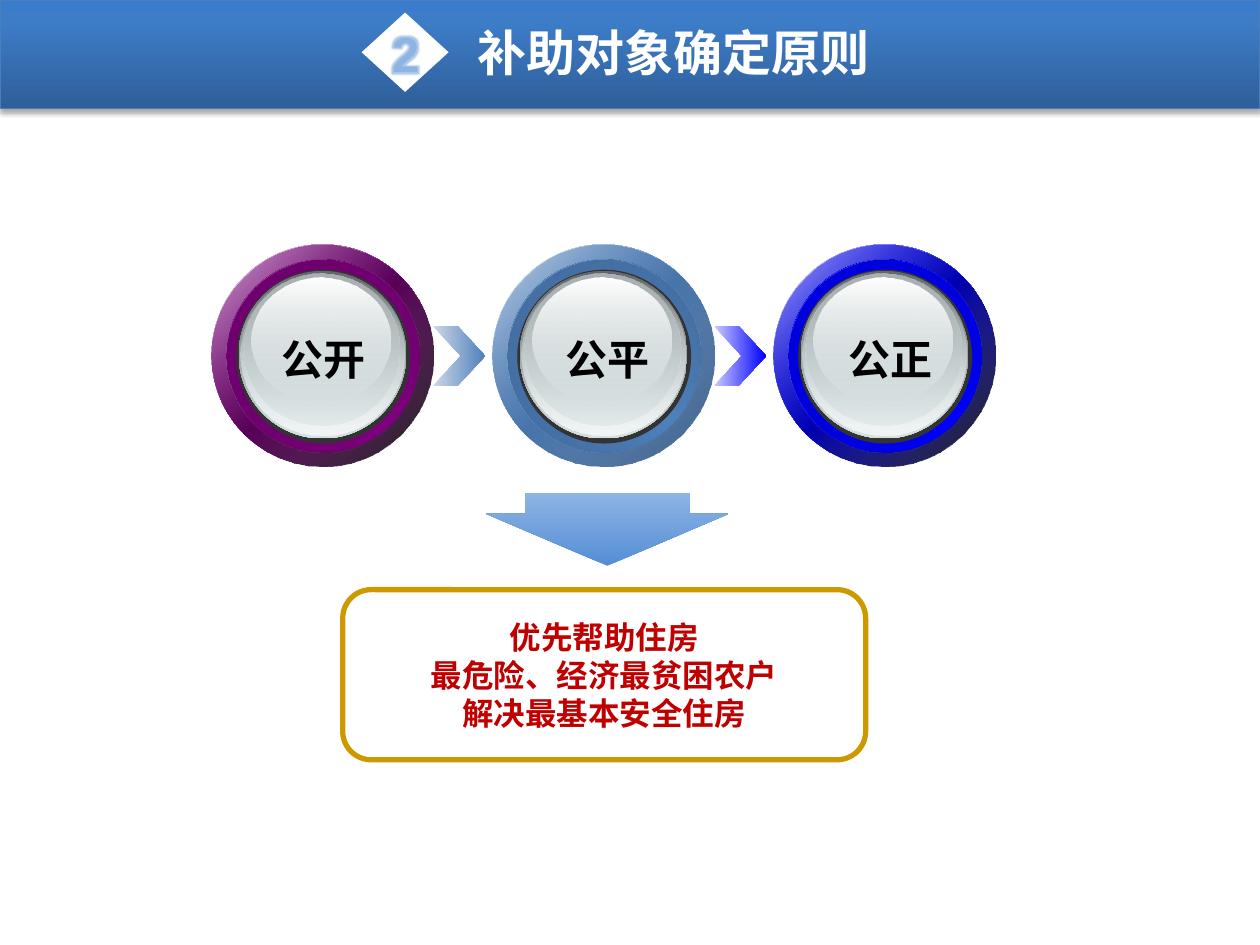
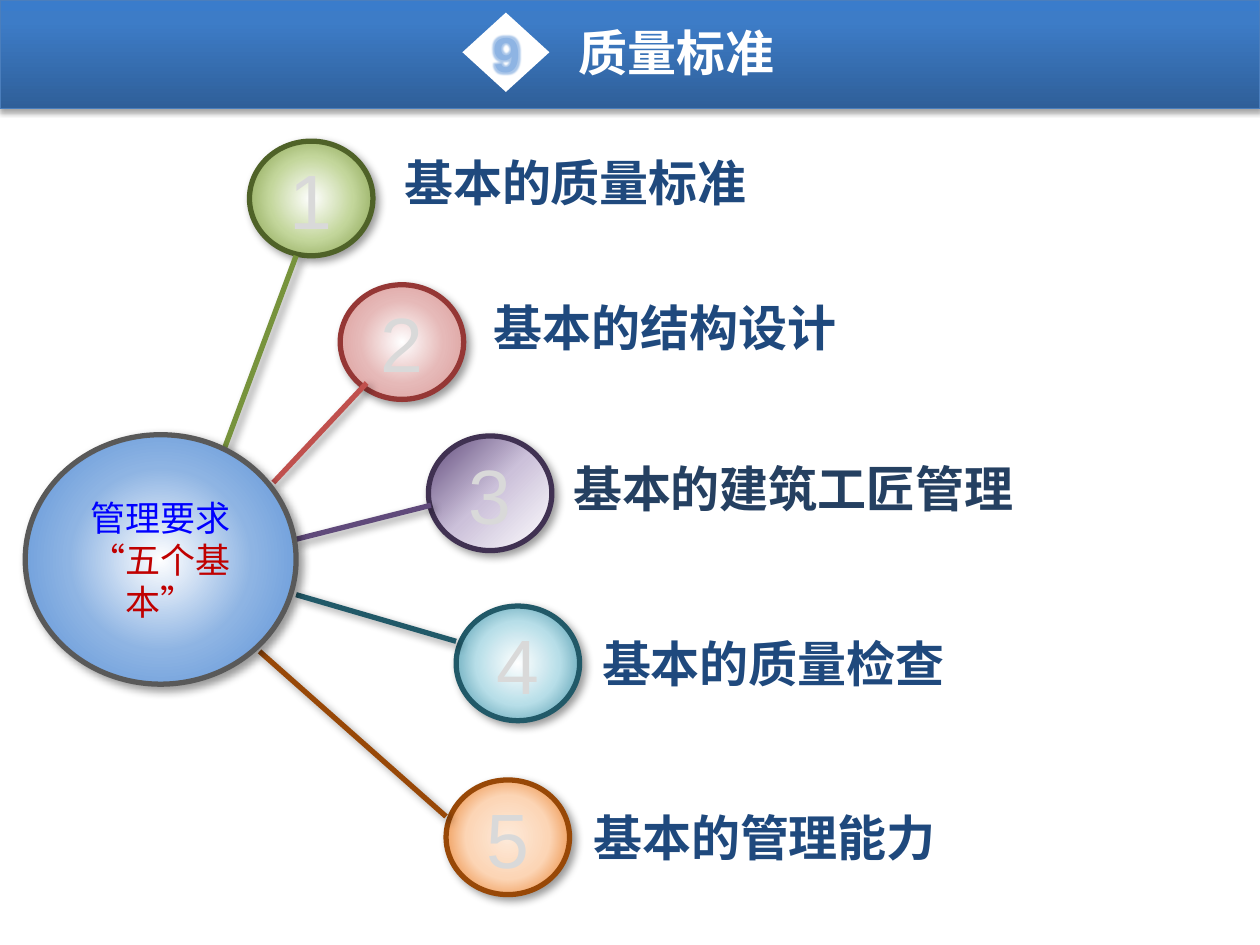
from pptx import Presentation
from pptx.dml.color import RGBColor
from pptx.enum.shapes import MSO_CONNECTOR, MSO_SHAPE
from pptx.enum.text import MSO_ANCHOR, MSO_AUTO_SIZE, PP_ALIGN
from pptx.oxml import parse_xml
from pptx.oxml.ns import nsdecls, qn
from pptx.util import Inches, Pt
from lxml import etree

RECT, OVAL, DIAMOND = MSO_SHAPE.RECTANGLE, MSO_SHAPE.OVAL, MSO_SHAPE.DIAMOND
CHEVRON, UP_ARROW, ROUNDED = MSO_SHAPE.CHEVRON, MSO_SHAPE.UP_ARROW, MSO_SHAPE.ROUNDED_RECTANGLE
STRAIGHT = MSO_CONNECTOR.STRAIGHT
LEFT, CENTER = PP_ALIGN.LEFT, PP_ALIGN.CENTER
TOP, MIDDLE = MSO_ANCHOR.TOP, MSO_ANCHOR.MIDDLE
FIT_SHAPE = MSO_AUTO_SIZE.SHAPE_TO_FIT_TEXT

C = RGBColor.from_string
WHITE, BLACK, CHARCOAL = C("FFFFFF"), C("000000"), C("333333")
SKY, AZURE, NAVY, DEEP_NAVY = C("8EB4E3"), C("558ED5"), C("1F497D"), C("254061")
BAND_DARK, BAND_MID, BAND_TOP, BAND_EDGE = C("2F5F99"), C("3D7CC7"), C("3A7CCB"), C("4B7EBC")
PURPLE, STEEL, BLUE = C("800080"), C("4F81BD"), C("0000FF")
GLASS, GLASS_DARK, GLASS_MID, GLASS_LIGHT = C("D6E1E2"), C("636869"), C("AAB2B3"), C("F1F5F5")
RED, GOLD, GREY, SILVER = C("C00000"), C("CC9900"), C("595959"), C("D9D9D9")

SANS, CJK = "Arial", "Noto Sans CJK SC"
SHADOW = (
    "<a:outerShdw %s" % nsdecls("a")
    + ' blurRad="{}" dist="{}" dir="{}" algn="t" rotWithShape="0">'
    '<a:srgbClr val="000000"><a:alpha val="{}"/></a:srgbClr></a:outerShdw>'
)
BAND_SHADOW = SHADOW.format(Pt(3.1), Pt(1.8), 90 * 60000, 35000)
NODE_SHADOW = SHADOW.format(Pt(5), Pt(3), 45 * 60000, 40000)
GLOW = (
    '<a:effectLst %s><a:glow rad="63500"><a:srgbClr val="%s">'
    '<a:alpha val="75000"/></a:srgbClr></a:glow></a:effectLst>' % (nsdecls("a"), SKY)
)
CENTRED = (50, 50, 50, 50)

prs = Presentation()
prs.slide_width, prs.slide_height = Inches(10), Inches(7.5)
COL, ROW = prs.slide_width // 100, prs.slide_height // 75


def draw(shapes, kind, box, fill=None, line=None, width=3, shadow=None):
    x, y, w, h = box
    sp = shapes.add_shape(kind, int(x * COL), int(y * ROW), int(w * COL), int(h * ROW))
    spPr = sp.element.spPr
    if fill is None:
        sp.fill.background()
    elif isinstance(fill, RGBColor):
        sp.fill.solid()
        sp.fill.fore_color.rgb = fill
    else:
        stops, way = fill
        gs = "".join(
            '<a:gs pos="%d"><a:srgbClr val="%s"><a:alpha val="%d"/></a:srgbClr></a:gs>'
            % (s[0] * 1000, s[1], (s[2] if len(s) > 2 else 100) * 1000)
            for s in stops
        )
        if isinstance(way, tuple):
            rect = 'l="%d000" t="%d000" r="%d000" b="%d000"' % way
            shade = '<a:path path="circle"><a:fillToRect %s/></a:path>' % rect
        else:
            shade = '<a:lin ang="%d" scaled="0"/>' % (way * 60000)
        sp.fill.gradient()
        spPr.replace(spPr.find(qn("a:gradFill")), parse_xml(
            '<a:gradFill %s rotWithShape="1"><a:gsLst>%s</a:gsLst>%s</a:gradFill>'
            % (nsdecls("a"), gs, shade)))
    if line is None:
        sp.line.fill.background()
    else:
        sp.line.color.rgb = line
        sp.line.width = Pt(width)
    sp.shadow.inherit = False
    if shadow:
        spPr.find(qn("a:effectLst")).append(parse_xml(shadow))
    return sp


def write(sp, text, size, color, bold=True, font=SANS, align=CENTER, wrap=False, anchor=TOP):
    tf = sp.text_frame
    tf.text = text
    tf.word_wrap = wrap
    tf.vertical_anchor = anchor
    for p in tf.paragraphs:
        p.alignment = align
        r = p.runs[0]
        r.font.size, r.font.bold, r.font.name = Pt(size), bold, font
        r.font.color.rgb = color
        rPr = r._r.get_or_add_rPr()
        rPr.set("lang", "zh-CN")
        etree.SubElement(rPr, qn("a:ea")).set("typeface", CJK)
    return tf


layout = prs.slide_layouts[5]
for ph in list(layout.placeholders)[1:]:
    ph.element.getparent().remove(ph.element)

slides = []
for number, heading, x, w in (("2", "补助对象确定原则", 36.9, 33.4), ("9", "质量标准", 44.9, 17.7)):
    slide = prs.slides.add_slide(layout)
    slides.append(slide)
    title = slide.shapes.title
    title.left, title.top = int(x * COL), int(1.3 * ROW)
    title.width, title.height = int(w * COL), int(5.7 * ROW)
    write(title, heading, 28, WHITE, font=CJK, align=LEFT).auto_size = FIT_SHAPE
    draw(slide.shapes, DIAMOND, (x - 8.2, 1, 6.9, 6.3), WHITE)
    tb = slide.shapes.add_textbox(
        int((x - 6.8) * COL), int(1.35 * ROW), int(4.2 * COL), int(5.7 * ROW))
    r = write(tb, number, 28, AZURE).paragraphs[0].runs[0]
    r.font.fill.gradient()
    r.font.fill.gradient_angle = 270
    for stop, color, position in zip(r.font.fill.gradient_stops, (SKY, AZURE), (0, 0.75)):
        stop.color.rgb = color
        stop.position = position
    r._r.rPr.find(qn("a:latin")).addprevious(parse_xml(GLOW))

principles, standards = slides

band = draw(principles.shapes, RECT, (0, 0, 100, 8.6),
            (((0, BAND_DARK), (80, BAND_MID), (100, BAND_TOP)), 270),
            BAND_EDGE, 0.75, BAND_SHADOW)
layout.shapes.element.insert(2, band.element)

glass_layers = (
    (1.95, 2, 13.8, 13.8, CHARCOAL),
    (2.15, 2.1, 13.3, 13.3, (((0, GLASS_DARK), (100, GLASS)), 90)),
    (2.3, 2.2, 13, 13, (((0, GLASS, 0), (100, GLASS_LIGHT)), 90)),
    (2.5, 2.3, 12.4, 12.1, (((0, GLASS_MID), (100, GLASS, 48)), 90)),
    (3.2, 2.65, 11, 9.9, (((0, WHITE), (100, GLASS, 38)), 90)),
)
rings = (
    ("公开", PURPLE, (100, BLACK, 90), C("620062"), C("690069"), None),
    ("公平", STEEL, (100, C("395C87")), C("3C6391"), C("416A9B"), C("CDD6E6")),
    ("公正", BLUE, (100, BLACK, 90), C("0000C3"), C("0000D1"), C("C9C9FF")),
)
for i, (label, base, edge, rim, inner, pale) in enumerate(rings):
    x, y = 16.8 + 22.3 * i, 19.4
    group = principles.shapes.add_group_shape().shapes
    if pale:
        sp = draw(group, CHEVRON, (x - 4.7, 25.9, 4.1, 4.7), (((0, pale), (100, base)), 0))
        sp.adjustments[0] = 0.53
    ring_layers = (
        (0, 0, 17.6, 17.6, (((0, WHITE), (50, base), (100, WHITE)), 45)),
        (0, 0, 17.6, 17.6, (((0, base, 32), edge), 45)),
        (1.2, 1.2, 15.3, 15.3, (((0, rim), (50, base), (100, rim)), 315)),
        (1.2, 1.2, 15.3, 15.3, (((0, inner), (100, base, 0)), 45)),
    )
    for dx, dy, w, h, fill in ring_layers + glass_layers:
        draw(group, OVAL, (x + dx, y + dy, w, h), fill)
    tb = group.add_textbox(
        int((21.3 + 22.5 * i) * COL), int(26 * ROW), int(8.8 * COL), int(5 * ROW))
    write(tb, label, 24, BLACK, font=CJK).auto_size = FIT_SHAPE

arrow = draw(principles.shapes, UP_ARROW, (38.6, 39.1, 19.2, 5.8),
             (((0, AZURE), (100, SKY)), 90))
arrow.rotation = 180
arrow.adjustments[0], arrow.adjustments[1] = 0.68, 0.71

goal = draw(principles.shapes, ROUNDED, (27.2, 46.8, 41.5, 13.5), line=GOLD)
write(goal, "优先帮助住房\n最危险、经济最贫困农户\n解决最基本安全住房", 18, RED, anchor=MIDDLE)

nodes = (
    ("基本的质量标准", NAVY, (31.1, 11.6, 30.7), (19.8, 11.2), (23.5, 20.3, 17.7, 35.9),
     (WHITE, C("C3D69B"), C("77933C")), CENTRED, C("4F6228"), C("77933C")),
    ("基本的结构设计", NAVY, (38.2, 23.1, 53), (27, 22.6), (29.1, 30.4, 21.7, 38.3),
     (WHITE, C("E6B9B8"), C("D99694")), CENTRED, C("953735"), C("C0504D")),
    ("基本的建筑工匠管理", DEEP_NAVY, (44.5, 35.9, 40.1), (34, 34.6), (23.5, 42.8, 34.2, 40.1),
     (WHITE, C("CCC1DA"), C("604A7B")), (100, 100, 0, 0), C("403152"), C("604A7B")),
    ("基本的质量检查", NAVY, (46.8, 49.8, 31.5), (36.2, 48.1), (23.5, 47.2, 36.2, 50.9),
     (WHITE, C("B7DEE8"), C("31859C")), CENTRED, C("215968"), C("215968")),
    ("基本的管理能力", NAVY, (46.1, 63.6, 31.5), (35.4, 61.9), (20.6, 51.7, 35.4, 64.8),
     (C("FDEADA"), C("FCD5B5"), C("E46C0A")), CENTRED, C("984807"), C("984807")),
)
balls = []
for i, (label, ink, (tx, ty, tw), (x, y), ends, shades, focus, rim, spoke) in enumerate(nodes, 1):
    tb = standards.shapes.add_textbox(
        int(tx * COL), int(ty * ROW), int(tw * COL), int(5.7 * ROW))
    write(tb, label, 28, ink, align=LEFT, wrap=True).auto_size = FIT_SHAPE
    group = standards.shapes.add_group_shape().shapes
    sp = draw(group, OVAL, (x, y, 9.8, 9.1), (tuple(zip((0, 50, 100), shades)), focus),
              rim, shadow=NODE_SHADOW)
    write(sp, str(i), 44, SILVER, bold=False, wrap=True, anchor=MIDDLE)
    balls.append(sp)
    x1, y1, x2, y2 = ends
    cn = group.add_connector(
        STRAIGHT, int(x1 * COL), int(y1 * ROW), int(x2 * COL), int(y2 * ROW))
    cn.line.color.rgb = spoke
    cn.line.width = Pt(3)
    etree.SubElement(cn.element.spPr, qn("a:effectLst")).append(parse_xml(NODE_SHADOW))

hub = draw(standards.shapes, OVAL, (2, 34.5, 21.5, 19.8),
           (((0, WHITE), (50, SKY), (100, AZURE)), CENTRED), GREY, shadow=NODE_SHADOW)
tf = write(hub, "管理要求\n“五个基本”", 20, BLUE, bold=False, wrap=True, anchor=MIDDLE)
tf.paragraphs[1].runs[0].font.color.rgb = RED
for sp in balls + [hub]:
    tf = sp.text_frame
    tf.margin_left = tf.margin_top = tf.margin_right = tf.margin_bottom = 0

prs.save("out.pptx")
